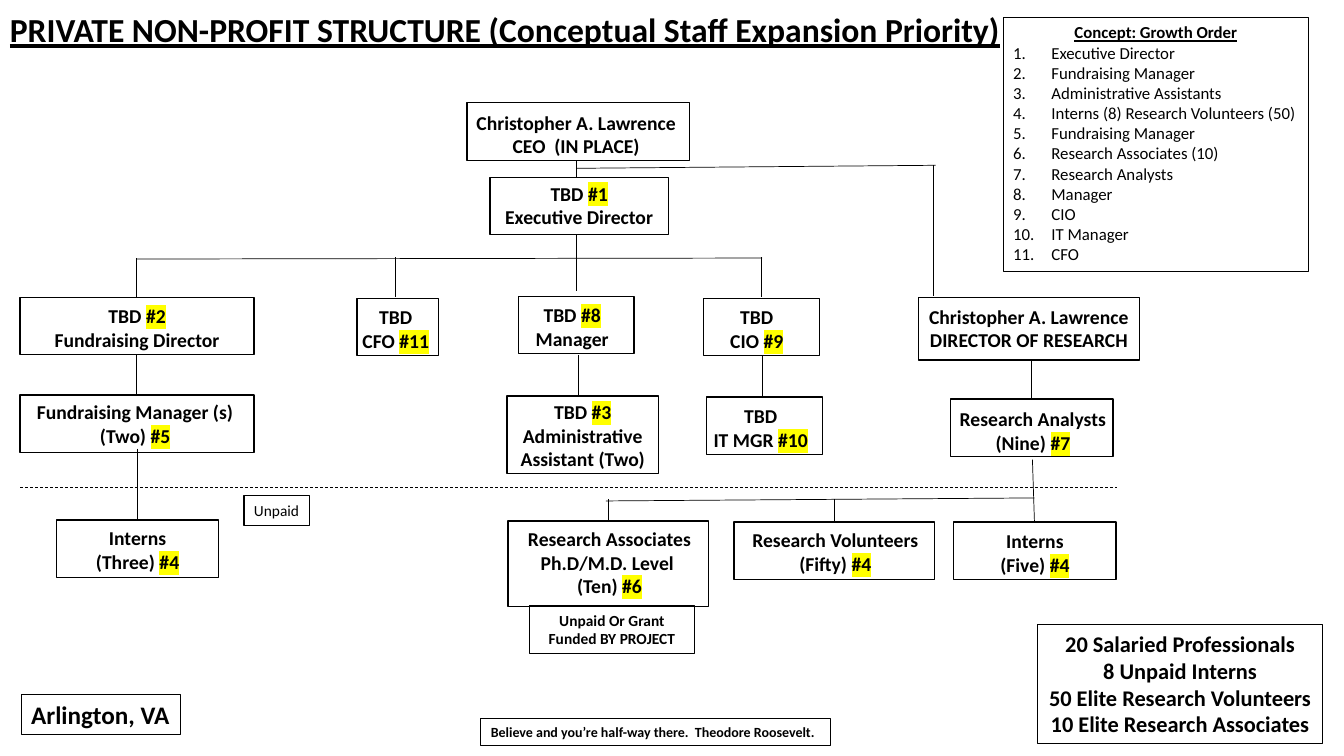
from lxml import etree
from pptx import Presentation
from pptx.dml.color import RGBColor
from pptx.enum import dml, shapes, text
from pptx.oxml.ns import qn
from pptx.util import Inches, Pt

COLORS = {"ink": "000000", "paper": "FFFFFF", "mark": "FFFF00"}
FONT = "Calibri"

TITLE = "PRIVATE NON-PROFIT STRUCTURE (Conceptual Staff Expansion Priority)"

# left, top, width, height, text shift right, text shift down, lines
STAFF = [
    (4.63, 1.02, 2.21, 0.57, -0.02, 0.03, ["Christopher A. Lawrence", "CEO  (IN PLACE)"]),
    (4.86, 1.76, 1.77, 0.57, 0, -0.01, ["TBD #1", "Executive Director"]),
    (0.2, 2.95, 2.32, 0.57, 0, 0.02, ["TBD #2", "Fundraising Director"]),
    (3.54, 2.96, 0.81, 0.57, -0.02, 0.02, ["TBD", "CFO #11"]),
    (5.14, 2.94, 1.15, 0.57, -0.04, 0.02, ["TBD #8", "Manager"]),
    (6.98, 2.96, 1.15, 0.57, -0.05, 0.02, ["TBD", "CIO #9"]),
    (9.11, 2.95, 2.19, 0.62, 0, 0.02, ["Christopher A. Lawrence", "DIRECTOR OF RESEARCH"]),
    (0.2, 3.92, 2.32, 0.57, -0.02, 0, ["Fundraising Manager (s)", "(Two) #5"]),
    (5.03, 3.93, 1.5, 0.77, 0, -0.01, ["TBD #3", "Administrative", "Assistant (Two)"]),
    (7.01, 3.94, 1.15, 0.57, -0.04, 0.02, ["TBD", "IT MGR #10"]),
    (9.43, 3.96, 1.61, 0.57, 0.01, 0.03, ["Research Analysts", "(Nine) #7"]),
    (0.56, 5.16, 1.61, 0.57, 0, 0.01, ["Interns", "(Three) #4"]),
    (5.04, 5.17, 1.99, 0.85, 0.01, 0.01, ["Research Associates", "Ph.D/M.D. Level ", "(Ten) #6"]),
    (7.28, 5.18, 1.99, 0.57, 0.01, 0.01, [" Research Volunteers ", "(Fifty) #4"]),
    (9.46, 5.18, 1.61, 0.57, 0, 0.02, ["Interns", "(Five) #4"]),
]
FILLED = "Executive Director"

# left, top, width, height, size, bold, centred, lines
NOTES = [
    (4.77, 7.13, 3.47, 0.27, 10, True, False,
     ["Believe and you’re half-way there.  Theodore Roosevelt."]),
    (10.29, 6.2, 2.83, 1.18, 16, True, True,
     ["20 Salaried Professionals", "8 Unpaid Interns",
      "50 Elite Research Volunteers", "10 Elite Research Associates"]),
    (0.21, 6.89, 1.58, 0.4, 18, True, False, ["Arlington, VA"]),
    (5.25, 6.01, 1.64, 0.47, 11, True, True, ["Unpaid Or Grant", "Funded BY PROJECT"]),
    (2.42, 4.92, 0.65, 0.29, 11, False, False, ["Unpaid"]),
]

GROWTH_TITLE = "Concept: Growth Order"
GROWTH_ORDER = [
    "Executive Director", "Fundraising Manager", "Administrative Assistants",
    "Interns (8) Research Volunteers (50)", "Fundraising Manager",
    "Research Associates (10)", "Research Analysts", "Manager", "CIO",
    "IT Manager", "CFO",
]

# x1, y1, x2, y2
LINKS = [
    (5.72, 1.6, 5.72, 2.89), (5.72, 1.67, 9.28, 1.64), (9.26, 1.64, 9.26, 2.94),
    (1.36, 2.57, 7.56, 2.56), (1.35, 2.56, 1.35, 2.96), (3.92, 2.55, 3.92, 2.95),
    (7.55, 2.55, 7.55, 2.95), (1.35, 3.52, 1.35, 3.92), (5.74, 3.52, 5.74, 3.92),
    (7.56, 3.53, 7.56, 3.93), (10.23, 3.57, 10.23, 3.97), (1.36, 4.45, 1.36, 5.17),
    (10.24, 4.56, 10.26, 5.18), (10.26, 4.94, 6.01, 4.97),
    (6.03, 4.95, 6.03, 5.18), (8.28, 4.95, 8.28, 5.18),
]
PAID_LINE = (0.2, 4.84, 11.08, 4.84)


def color(name):
    return RGBColor.from_string(COLORS[name])


def add_run(p, words, size, bold=False, underline=False, marked=False):
    r = p.add_run()
    r.text = words
    r.font.size, r.font.bold, r.font.underline = Pt(size), bold, underline
    r.font.color.rgb = color("ink")
    if marked:
        highlight = etree.SubElement(r.font._element, qn("a:highlight"))
        etree.SubElement(highlight, qn("a:srgbClr"), val=COLORS["mark"])
    r.font.name = FONT


def add_lines(tf, lines, size, bold, centred):
    """Write one paragraph per line; a part that starts with # is highlighted."""
    for i, line in enumerate(lines):
        p = tf.paragraphs[0] if i == 0 else tf.add_paragraph()
        p.alignment = text.PP_ALIGN.CENTER if centred else text.PP_ALIGN.LEFT
        words, mark, number = line.partition("#")
        add_run(p, words, size, bold)
        if mark:
            add_run(p, mark + number, size, bold, marked=True)


def add_box(s, left, top, width, height, weight, fill=None):
    sp = s.shapes.add_shape(shapes.MSO_SHAPE.RECTANGLE, Inches(left), Inches(top),
                            Inches(width), Inches(height))
    sp.shadow.inherit = False
    if fill:
        sp.fill.solid()
        sp.fill.fore_color.rgb = color(fill)
    else:
        sp.fill.background()
    sp.line.color.rgb = color("ink")
    sp.line.width = Pt(weight)
    tf = sp.text_frame
    tf.vertical_anchor = text.MSO_ANCHOR.TOP
    tf.word_wrap = False
    return tf


def add_link(s, x1, y1, x2, y2):
    link = s.shapes.add_connector(shapes.MSO_CONNECTOR.STRAIGHT, Inches(x1), Inches(y1),
                                  Inches(x2), Inches(y2))
    link.line.color.rgb = color("ink")
    link.line.width = Pt(0.5)
    etree.SubElement(link._element.spPr, qn("a:effectLst"))
    return link


def add_growth_order(s):
    tf = add_box(s, 9.95, 0.17, 3.03, 2.52, 0.75)
    p = tf.paragraphs[0]
    p.alignment = text.PP_ALIGN.CENTER
    add_run(p, GROWTH_TITLE, 12, bold=True, underline=True)
    for role in GROWTH_ORDER:
        p = tf.add_paragraph()
        p.alignment = text.PP_ALIGN.LEFT
        pPr = p._p.get_or_add_pPr()
        pPr.set("marL", str(Inches(0.38)))
        pPr.set("indent", str(-Inches(0.38)))
        etree.SubElement(pPr, qn("a:buAutoNum"), type="arabicPeriod")
        add_run(p, role, 12)


def main():
    prs = Presentation()
    prs.slide_width, prs.slide_height = Inches(13.33), Inches(7.5)
    s = prs.slides.add_slide(prs.slide_layouts[6])

    title = s.shapes.add_textbox(Inches(0), Inches(0.04), Inches(10.06), Inches(0.5))
    title.text_frame.word_wrap = False
    add_run(title.text_frame.paragraphs[0], TITLE, 24, bold=True, underline=True)

    for ends in LINKS:
        add_link(s, *ends)
    add_link(s, *PAID_LINE).line.dash_style = dml.MSO_LINE.DASH

    for left, top, width, height, right, down, lines in STAFF:
        fill = "paper" if FILLED in lines else None
        tf = add_box(s, left, top, width, height, 1, fill)
        tf.word_wrap = True
        tf.margin_left = Inches(max(0, 2 * right))
        tf.margin_right = Inches(max(0, -2 * right))
        tf.margin_top = Inches(0.05 + down)
        tf.margin_bottom = 0
        add_lines(tf, lines, 14, True, True)

    for left, top, width, height, size, bold, centred, lines in NOTES:
        tf = add_box(s, left, top, width, height, 0.75)
        add_lines(tf, lines, size, bold, centred)

    add_growth_order(s)
    prs.save("out.pptx")


if __name__ == "__main__":
    main()
